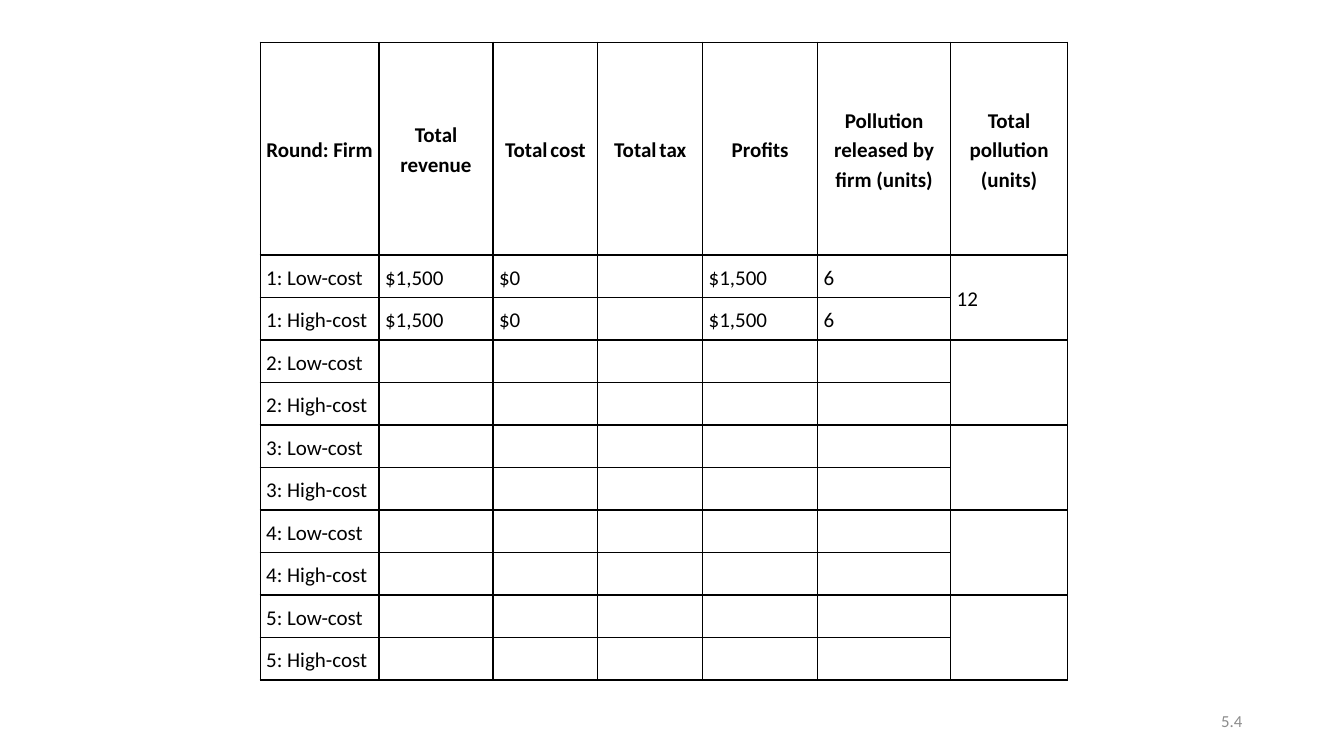
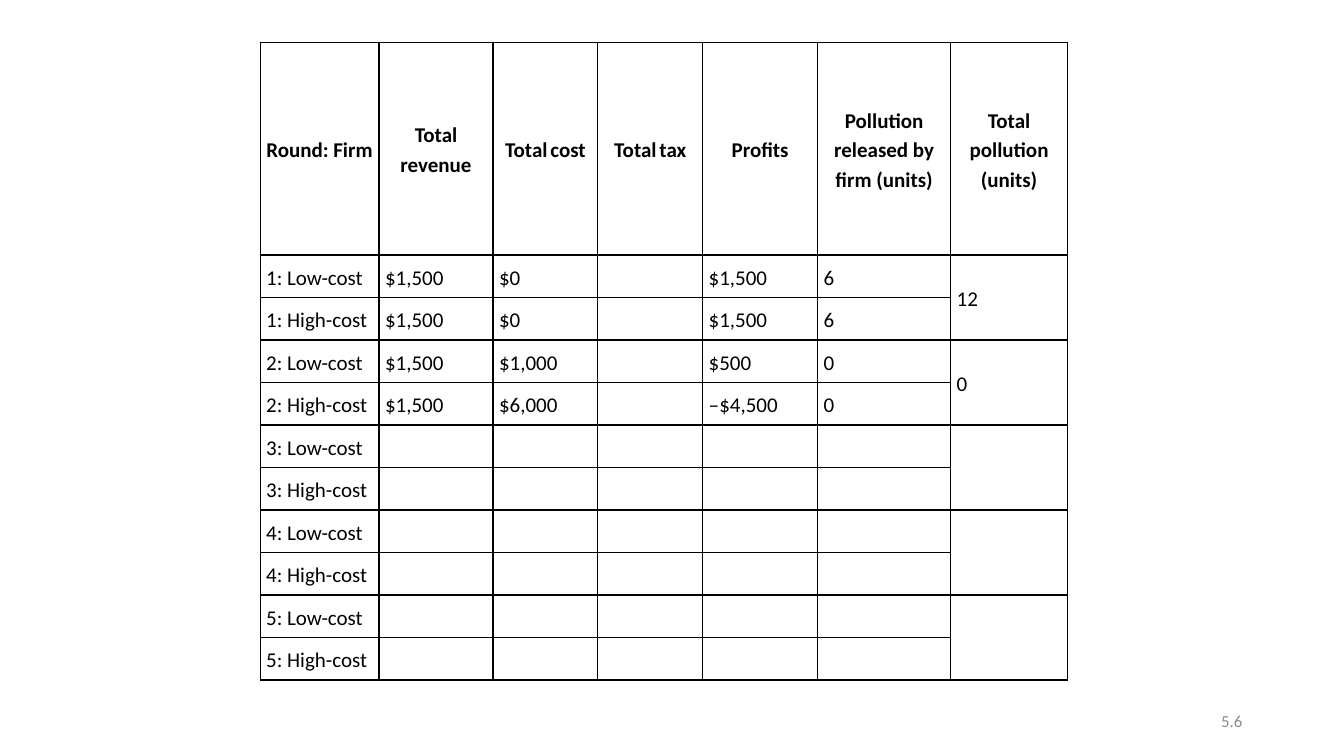
import pptx
import pptx.dml.color
import pptx.enum.text
import pptx.util
from lxml import etree
from pptx.oxml.ns import qn

Inches = pptx.util.Inches
Pt = pptx.util.Pt
PP_ALIGN = pptx.enum.text.PP_ALIGN
MIDDLE = pptx.enum.text.MSO_ANCHOR.MIDDLE

FONT = "Calibri"
BLACK = "000000"
GREY = "8C8C8C"

TABLE_LEFT, TABLE_TOP, TABLE_HEIGHT = 2.58, 0.42, 6.33
HEADER_HEIGHT = 2.11
COLUMN_WIDTHS = [1.18, 1.13, 1.04, 1.04, 1.14, 1.32, 1.16]
# Words of one heading that are set apart by a narrow space are separate items.
HEADINGS = [
    ["Round: Firm"],
    ["Total", "revenue"],
    ["Total", "cost"],
    ["Total", "tax"],
    ["Profits"],
    ["Pollution released by firm (units)"],
    ["Total pollution (units)"],
]
ROUND_COUNT = 5
FIRMS = ["Low-cost", "High-cost"]

# For each round: one row of results per firm, then the total pollution.
ROUND_1 = ([["$1,500", "$0", "", "$1,500", "6"]] * 2, "12")
ROUND_2 = (
    [
        ["$1,500", "$1,000", "", "$500", "0"],
        ["$1,500", "$6,000", "", "‒$4,500", "0"],
    ],
    "0",
)
NOT_PLAYED = ([[""] * 5] * 2, "")


def rgb(color):
    return pptx.dml.color.RGBColor.from_string(color)


def format_paragraph(paragraph, size, color, alignment, bold=False):
    paragraph.alignment = alignment
    paragraph.font.name = FONT
    paragraph.font.size = Pt(size)
    paragraph.font.color.rgb = rgb(color)
    paragraph.font.bold = bold


def set_borders(cell, color, width):
    properties = cell._tc.get_or_add_tcPr()
    for side in ("lnL", "lnR", "lnT", "lnB"):
        line = etree.SubElement(properties, qn(f"a:{side}"), w=str(Pt(width)))
        fill = etree.SubElement(line, qn("a:solidFill"))
        etree.SubElement(fill, qn("a:srgbClr"), val=color)


def fill_cell(cell, words, alignment=PP_ALIGN.LEFT, bold=False):
    """Write the words, with a narrow space between them, and style the cell."""
    set_borders(cell, BLACK, 1)
    cell.fill.background()
    cell.vertical_anchor = MIDDLE
    cell.margin_left = cell.margin_right = Inches(0.06)
    cell.margin_top = cell.margin_bottom = 0
    paragraph = cell.text_frame.paragraphs[0]
    format_paragraph(paragraph, 15, BLACK, alignment, bold)
    paragraph.line_spacing = 1.15
    paragraph.space_after = Pt(10)
    for index, word in enumerate(words):
        if index:
            gap = paragraph.add_run()
            gap.text = " "
            gap.font.size = Pt(9)
        if word:
            paragraph.add_run().text = word


def add_results_table(slide, rounds):
    row_count = 1 + len(rounds) * len(FIRMS)
    table = slide.shapes.add_table(
        row_count, len(HEADINGS), Inches(TABLE_LEFT), Inches(TABLE_TOP),
        Inches(sum(COLUMN_WIDTHS)), Inches(TABLE_HEIGHT),
    ).table
    table.first_row = table.horz_banding = False

    for column, width in zip(table.columns, COLUMN_WIDTHS):
        column.width = Inches(width)
    body_height = (TABLE_HEIGHT - HEADER_HEIGHT) / (row_count - 1)
    for index, row in enumerate(table.rows):
        row.height = Inches(body_height if index else HEADER_HEIGHT)

    for column, heading in enumerate(HEADINGS):
        fill_cell(table.cell(0, column), heading, PP_ALIGN.CENTER, bold=True)

    total_column = len(HEADINGS) - 1
    for round_index, (results, total) in enumerate(rounds):
        first_row = 1 + round_index * len(FIRMS)
        for offset, (firm, values) in enumerate(zip(FIRMS, results)):
            texts = [f"{round_index + 1}: {firm}", *values, "" if offset else total]
            for column, text in enumerate(texts):
                fill_cell(table.cell(first_row + offset, column), [text])
        last_row = first_row + len(FIRMS) - 1
        table.cell(first_row, total_column).merge(table.cell(last_row, total_column))


def add_page_number(slide, number):
    box = slide.shapes.add_textbox(Inches(9.42), Inches(6.95), Inches(3), Inches(0.4))
    frame = box.text_frame
    frame.word_wrap = True
    frame.vertical_anchor = MIDDLE
    frame.text = number
    format_paragraph(frame.paragraphs[0], 12, GREY, PP_ALIGN.RIGHT)


def add_results_slide(presentation, number, played_rounds):
    slide = presentation.slides.add_slide(presentation.slide_layouts[6])
    remaining = ROUND_COUNT - len(played_rounds)
    add_results_table(slide, played_rounds + [NOT_PLAYED] * remaining)
    add_page_number(slide, number)


def main():
    presentation = pptx.Presentation()
    presentation.slide_width = Inches(13.33)
    presentation.slide_height = Inches(7.5)
    add_results_slide(presentation, "5.4", [ROUND_1])
    add_results_slide(presentation, "5.6", [ROUND_1, ROUND_2])
    presentation.save("out.pptx")


if __name__ == "__main__":
    main()
